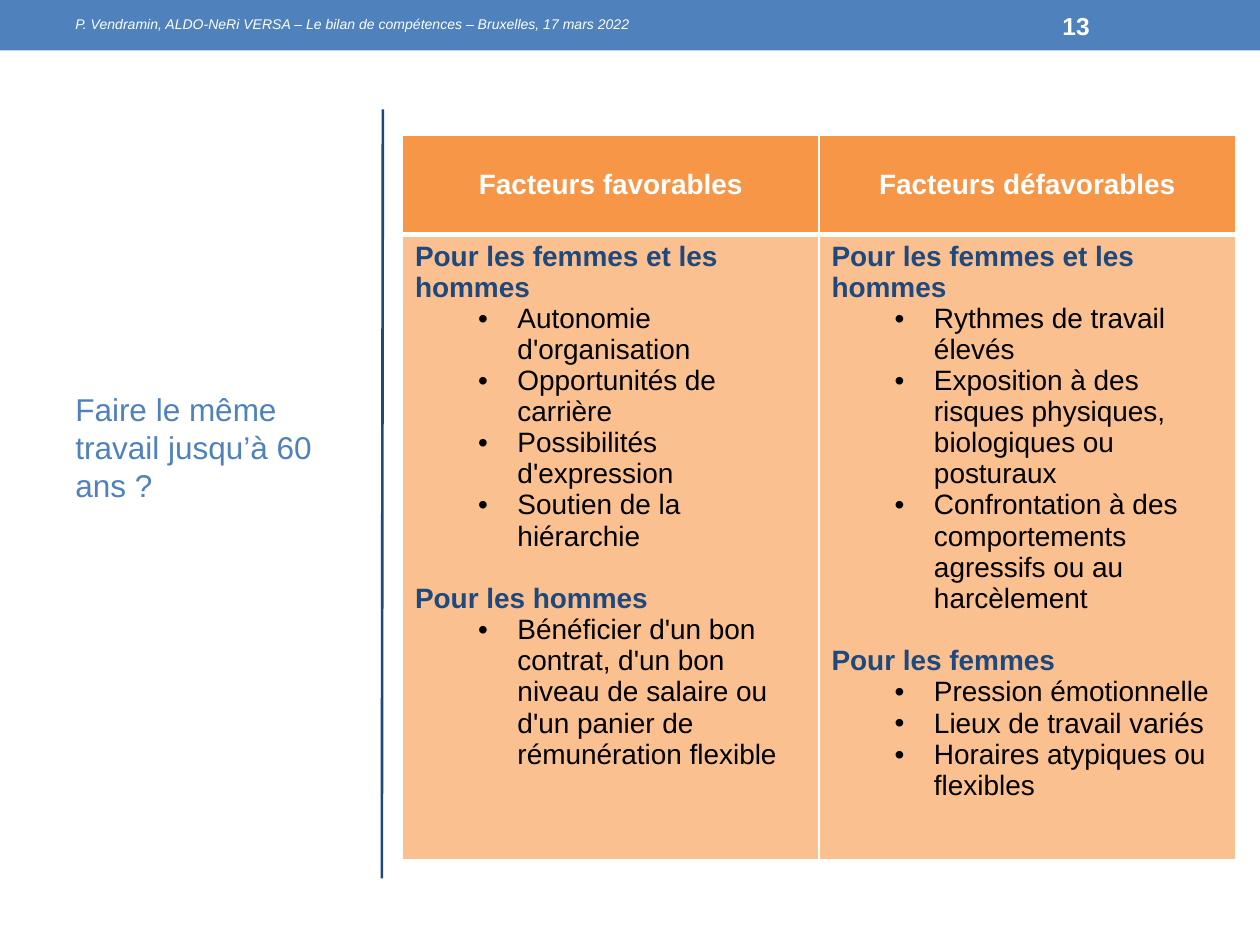
from dataclasses import dataclass

from lxml.etree import SubElement
from pptx import Presentation
from pptx.dml.color import RGBColor as RGB
from pptx.enum.shapes import MSO_CONNECTOR as CONN, MSO_SHAPE as SHAPE
from pptx.enum.text import MSO_ANCHOR as ANCHOR, PP_ALIGN as ALIGN
from pptx.oxml.ns import qn
from pptx.util import Pt


@dataclass(frozen=True)
class Theme:
    font: str = "Arial"
    blue: str = "4F81BD"
    navy: str = "1F497D"
    orange: str = "F79646"
    peach: str = "FAC090"
    white: str = "FFFFFF"
    black: str = "000000"
    credit: int = 8
    number: int = 14
    cell: int = 16
    title: int = 18


class Deck:
    def __init__(self, theme):
        self.t = theme
        self.prs = Presentation()
        self.prs.slide_width, self.prs.slide_height = Pt(720), Pt(540)
        self.s = self.prs.slides.add_slide(self.prs.slide_layouts[6])

    def run(self, p, text, size, color, bold=False, italic=False):
        r = p.add_run()
        r.text = text
        f = r.font
        f.name, f.size, f.bold, f.italic = self.t.font, Pt(size), bold, italic
        f.color.rgb = RGB.from_string(color)

    def bar(self, x, y, w, h, color):
        sp = self.s.shapes.add_shape(SHAPE.RECTANGLE, Pt(x), Pt(y), Pt(w), Pt(h))
        sp.shadow.inherit = False
        sp.fill.solid()
        sp.fill.fore_color.rgb = RGB.from_string(color)
        sp.line.fill.background()

    def line(self, x1, y1, x2, y2, color, width):
        ln = self.s.shapes.add_connector(CONN.STRAIGHT, Pt(x1), Pt(y1), Pt(x2), Pt(y2))
        ln.line.color.rgb = RGB.from_string(color)
        ln.line.width = Pt(width)
        SubElement(ln._element.spPr, qn("a:effectLst"))

    def text(self, x, y, w, h, text, size, color, anchor=ANCHOR.MIDDLE,
             inset=3.6, spacing=None, **style):
        tf = self.s.shapes.add_textbox(Pt(x), Pt(y), Pt(w), Pt(h)).text_frame
        tf.word_wrap = True
        tf.vertical_anchor = anchor
        tf.margin_top = Pt(inset)
        p = tf.paragraphs[0]
        p.line_spacing = spacing
        self.run(p, text, size, color, **style)

    def borders(self, cell, bottom):
        tc_pr = cell._tc.get_or_add_tcPr()
        for side, width in zip("LRTB", (1, 1, bottom if bottom == 1 else 1, bottom)):
            ln = SubElement(tc_pr, qn(f"a:ln{side}"), w=str(Pt(width)))
            fill = SubElement(ln, qn("a:solidFill"))
            SubElement(fill, qn("a:srgbClr"), val=self.t.white)

    def bullet(self, p):
        p.level = 1
        p_pr = p._p.get_or_add_pPr()
        p_pr.set("marL", str(Pt(58.5)))
        p_pr.set("indent", str(Pt(-22.5)))
        SubElement(p_pr, qn("a:buFont"), typeface=self.t.font)
        SubElement(p_pr, qn("a:buChar"), char="•")

    def header_cell(self, cell, text):
        self.borders(cell, 3)
        cell.fill.solid()
        cell.fill.fore_color.rgb = RGB.from_string(self.t.orange)
        cell.vertical_anchor = ANCHOR.MIDDLE
        p = cell.text_frame.paragraphs[0]
        p.alignment = ALIGN.CENTER
        self.run(p, text, self.t.cell, self.t.white, bold=True)

    def body_cell(self, cell, groups):
        self.borders(cell, 1)
        cell.fill.solid()
        cell.fill.fore_color.rgb = RGB.from_string(self.t.peach)
        tf = cell.text_frame
        for i, (heading, items) in enumerate(groups):
            p = tf.add_paragraph() if i else tf.paragraphs[0]
            if i:
                p.space_before = Pt(18)
            self.run(p, heading, self.t.cell, self.t.navy, bold=True)
            for item in items:
                p = tf.add_paragraph()
                self.bullet(p)
                self.run(p, item, self.t.cell, self.t.black)

    def table(self, x, y, w, heights, columns):
        tb = self.s.shapes.add_table(len(heights), len(columns), Pt(x), Pt(y),
                                     Pt(w), Pt(sum(heights))).table
        tb.horz_banding = False
        for row, height in zip(tb.rows, heights):
            row.height = Pt(height)
        for c, (title, groups) in enumerate(columns):
            tb.columns[c].width = Pt(w / len(columns))
            self.header_cell(tb.cell(0, c), title)
            self.body_cell(tb.cell(1, c), groups)


FACTORS = [
    ("Facteurs favorables", [
        ("Pour les femmes et les hommes", [
            "Autonomie d'organisation",
            "Opportunités de carrière",
            "Possibilités d'expression",
            "Soutien de la hiérarchie",
        ]),
        ("Pour les hommes", [
            "Bénéficier d'un bon contrat, d'un bon niveau de salaire ou "
            "d'un panier de rémunération flexible",
        ]),
    ]),
    ("Facteurs défavorables", [
        ("Pour les femmes et les hommes", [
            "Rythmes de travail élevés",
            "Exposition à des risques physiques, biologiques ou posturaux",
            "Confrontation à des comportements agressifs ou au harcèlement",
        ]),
        ("Pour les femmes", [
            "Pression émotionnelle",
            "Lieux de travail variés",
            "Horaires atypiques ou flexibles",
        ]),
    ]),
]


def main():
    t = Theme()
    d = Deck(t)
    d.bar(0, 0, 720, 28.8, t.blue)
    d.line(218.8, 62.5, 218.2, 502, t.navy, 1.5)
    d.text(36, 168, 168.5, 334, "Faire le même travail jusqu’à 60 ans ?",
           t.title, t.blue, anchor=ANCHOR.TOP, inset=55)
    d.text(36, 1.5, 558, 26,
           "P. Vendramin, ALDO-NeRi VERSA – Le bilan de compétences – Bruxelles, 17 mars 2022",
           t.credit, t.white, spacing=0.9, italic=True)
    d.text(600, 1.5, 84, 26, "13", t.number, t.white, bold=True)
    d.table(230, 77.3, 476, [56.8, 357], FACTORS)
    d.prs.save("out.pptx")


if __name__ == "__main__":
    main()
